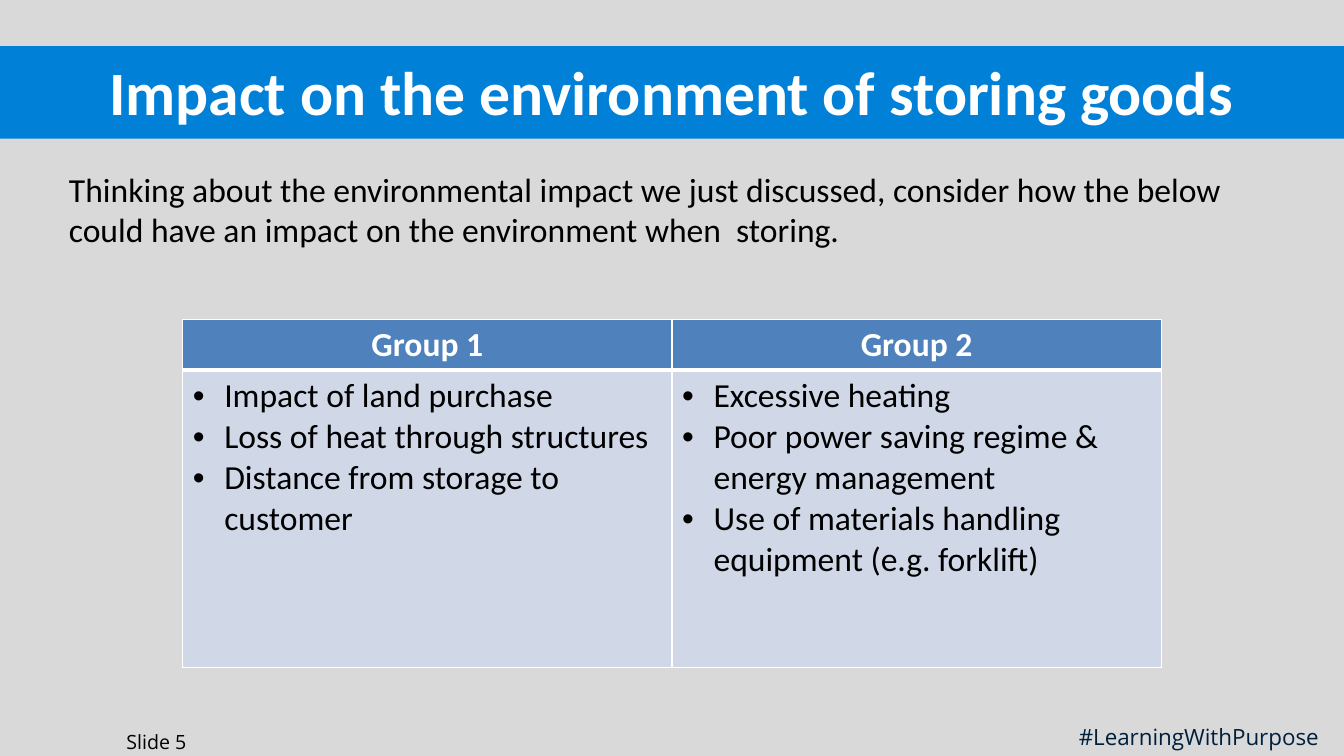
from lxml.etree import SubElement
from pptx import Presentation
from pptx.dml.color import RGBColor
from pptx.enum.shapes import MSO_SHAPE
from pptx.enum.text import MSO_ANCHOR, MSO_AUTO_SIZE, PP_ALIGN as Align
from pptx.oxml.ns import qn
from pptx.util import Pt

EMU_PER_PX = 9525
COLORS = {
    "background": "D9D9D9", "band": "0080D7", "navy": "001F3C",
    "black": "000000", "white": "FFFFFF",
    "header": "4F81BD", "cell": "D0D8E8",
}
GROUPS = {
    "Group 1": ["Impact of land purchase",
                "Loss of heat through structures",
                "Distance from storage to customer"],
    "Group 2": ["Excessive heating",
                "Poor power saving regime & energy management",
                "Use of materials handling equipment (e.g. forklift)"],
}


def px(*lengths):
    return [length * EMU_PER_PX for length in lengths]


def color(name):
    return RGBColor.from_string(COLORS[name])


class SlideBuilder:
    """Holds the text style and the current slide."""

    heading_font = "Calibri"
    label_font = "Open Sans"
    body_size = 24
    bullet_indent = 30

    def __init__(self, slide):
        self.slide = slide
        slide.background.fill.solid()
        slide.background.fill.fore_color.rgb = color("background")

    def add_text(self, paragraph, text, size, ink, font=heading_font,
                 bold=False, align=Align.LEFT, bullet=False):
        properties = paragraph._p.get_or_add_pPr()
        indent = px(self.bullet_indent)[0] if bullet else 0
        properties.set("marL", str(indent))
        properties.set("indent", str(-indent))
        if bullet:
            SubElement(properties, qn("a:buFont"), typeface="Arial")
            SubElement(properties, qn("a:buChar"), char="•")
        else:
            SubElement(properties, qn("a:buNone"))
        paragraph.alignment = align
        paragraph.space_before = Pt(0)
        run = paragraph.add_run()
        run.text = text
        run.font.name = font
        run.font.size = Pt(size)
        run.font.bold = bold
        run.font.color.rgb = color(ink)

    def band(self, *box):
        shape = self.slide.shapes.add_shape(MSO_SHAPE.RECTANGLE, *px(*box))
        shape.shadow.inherit = False
        shape.fill.solid()
        shape.fill.fore_color.rgb = color("band")
        shape.line.fill.background()
        # Keep the band behind the placeholders
        tree = self.slide.shapes._spTree
        tree.remove(shape._element)
        tree.insert(2, shape._element)

    def placeholder(self, index, box, text, size, ink, **style):
        shape = self.slide.placeholders[index]
        shape.left, shape.top, shape.width, shape.height = px(*box)
        frame = shape.text_frame
        frame.word_wrap = True
        frame.auto_size = MSO_AUTO_SIZE.NONE
        frame.vertical_anchor = MSO_ANCHOR.TOP
        self.add_text(frame.paragraphs[0], text, size, ink, **style)

    def label(self, box, text, size, ink, **style):
        frame = self.slide.shapes.add_textbox(*px(*box)).text_frame
        frame.word_wrap = True
        self.add_text(frame.paragraphs[0], text, size, ink,
                      font=self.label_font, **style)

    def style_cell(self, cell, fill, **widths):
        properties = cell._tc.get_or_add_tcPr()
        for side in "LRTB":
            width = Pt(widths.get(side, 1))
            line = SubElement(properties, qn(f"a:ln{side}"), w=str(width))
            solid = SubElement(line, qn("a:solidFill"))
            SubElement(solid, qn("a:srgbClr"), val=COLORS["white"])
        cell.fill.solid()
        cell.fill.fore_color.rgb = color(fill)

    def table(self, left, top, column_width, row_heights, groups):
        box = px(left, top, column_width * len(groups), sum(row_heights))
        table = self.slide.shapes.add_table(
            len(row_heights), len(groups), *box).table
        table.horz_banding = False
        for row, height in zip(table.rows, px(*row_heights)):
            row.height = height
        for column, (heading, points) in enumerate(groups.items()):
            table.columns[column].width = px(column_width)[0]
            header, body = table.cell(0, column), table.cell(1, column)
            self.style_cell(header, "header", B=3)
            self.style_cell(body, "cell", T=3)
            self.add_text(header.text_frame.paragraphs[0], heading,
                          self.body_size, "white", bold=True,
                          align=Align.CENTER)
            frame = body.text_frame
            for number, point in enumerate(points):
                paragraph = (frame.add_paragraph() if number
                             else frame.paragraphs[0])
                self.add_text(paragraph, point, self.body_size, "black",
                              bullet=True)


def main():
    presentation = Presentation()
    presentation.slide_width, presentation.slide_height = px(1280, 720)
    layout = presentation.slide_layouts[1]
    builder = SlideBuilder(presentation.slides.add_slide(layout))

    # Title band
    builder.band(0, 44, 1280, 88)
    builder.placeholder(0, (0, 47, 1280, 49),
                        "Impact on the environment of storing goods",
                        44, "white", bold=True, align=Align.CENTER)

    # Task
    builder.placeholder(1, (56, 156, 1169, 166),
                        "Thinking about the environmental impact we just "
                        "discussed, consider how the below could have an "
                        "impact on the environment when  storing.",
                        builder.body_size, "black")

    # Discussion groups
    builder.table(174, 304, 466, (48, 283), GROUPS)

    # Footer
    builder.label((1018, 684, 259, 36), "#LearningWithPurpose", 16, "navy")
    builder.label((104, 690, 90, 33), "Slide 5", 14, "black",
                  align=Align.CENTER)

    presentation.save("out.pptx")


if __name__ == "__main__":
    main()
